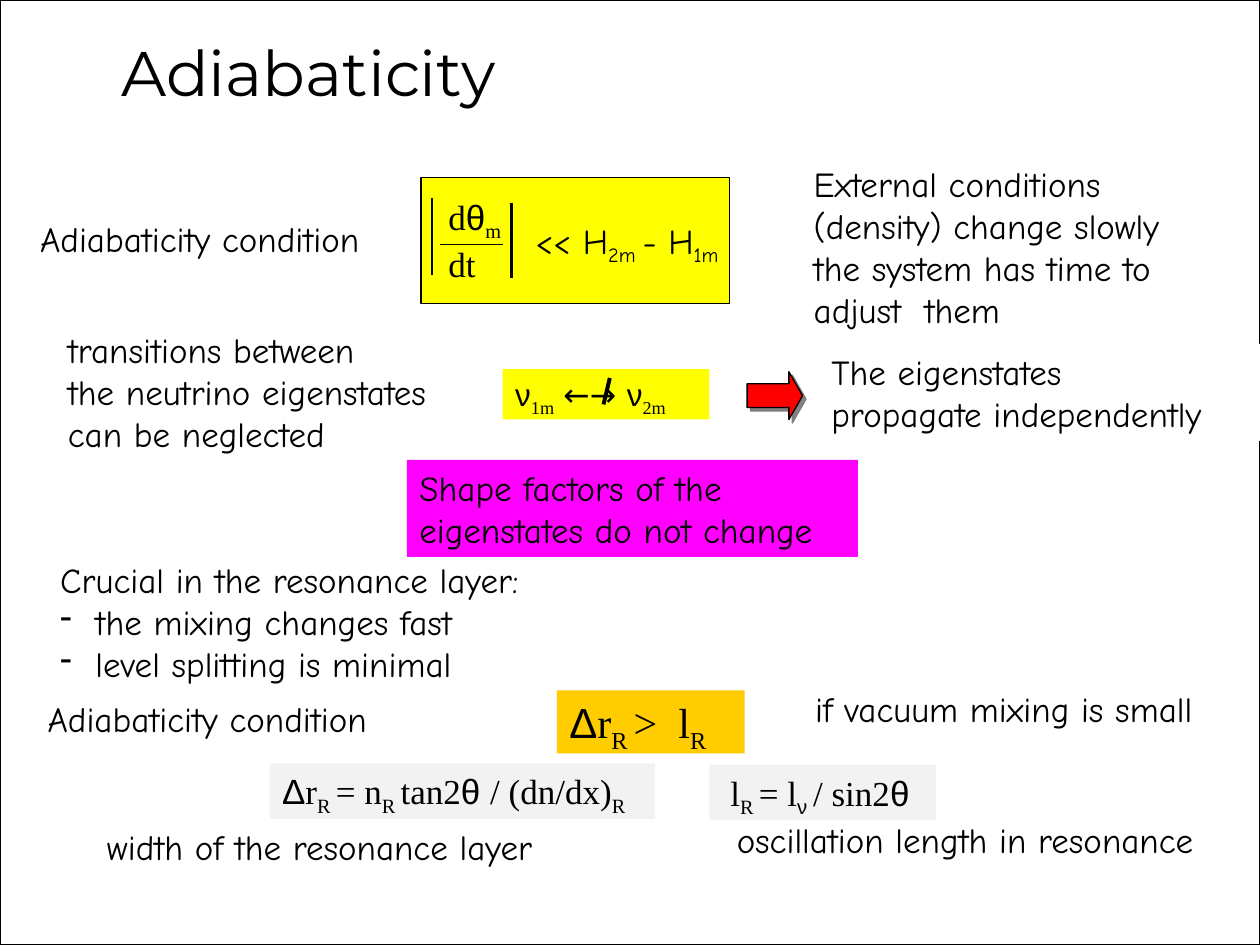
from dataclasses import dataclass
from typing import NamedTuple

from lxml.etree import SubElement
from pptx import Presentation
from pptx.dml.color import RGBColor
from pptx.enum.shapes import MSO_CONNECTOR as Conn, MSO_SHAPE as Shape
from pptx.enum.text import MSO_AUTO_SIZE as Fit, PP_ALIGN as Align
from pptx.oxml.ns import qn
from pptx.util import Inches, Pt


@dataclass(frozen=True)
class Theme:
    ink: str = "000000"
    paper: str = "FFFFFF"
    yellow: str = "FFFF00"
    orange: str = "FFCC00"
    grey: str = "F2F2F2"
    magenta: str = "FF00FF"
    red: str = "FF0000"
    shadow: str = "808080"
    hand: str = "Comic Neue"
    serif: str = "Times New Roman"
    symbol: str = "Arial"
    heading: str = "Montserrat"
    title: int = 36
    large: int = 24
    body: int = 20
    small: int = 18


T = Theme()


class Run(NamedTuple):
    text: str
    font: str = T.hand
    sub: bool = False


def serif(text: str) -> Run:
    return Run(text, T.serif)


def sub(text: str, font: str = T.serif) -> Run:
    return Run(text, font, True)


def symbol(text: str) -> Run:
    return Run(text, T.symbol)


@dataclass(frozen=True)
class Label:
    """A text box; each line is a plain string or a list of runs."""
    at: tuple[float, float, float, float]
    lines: list
    size: int = T.body
    fill: str | None = None
    wrap: bool = False
    align: Align = Align.LEFT
    fit: Fit = Fit.SHAPE_TO_FIT_TEXT
    dashed_from: int | None = None


class Rule(NamedTuple):
    start: tuple[float, float]
    end: tuple[float, float]
    width: float


def rgb(value: str) -> RGBColor:
    return RGBColor.from_string(value)


def add_dash(p) -> None:
    pPr = p._p.get_or_add_pPr()
    pPr.set("marL", str(Inches(0.28)))
    pPr.set("indent", str(-Inches(0.28)))
    SubElement(pPr, qn("a:buChar")).set("char", "-")


def add_label(s, label: Label) -> None:
    sp = s.shapes.add_textbox(*map(Inches, label.at))
    if label.fill:
        sp.fill.solid()
        sp.fill.fore_color.rgb = rgb(label.fill)
    tf = sp.text_frame
    for name, value in {"word_wrap": label.wrap, "auto_size": label.fit}.items():
        setattr(tf, name, value)
    for i, line in enumerate(label.lines):
        p = tf.add_paragraph() if i else tf.paragraphs[0]
        p.alignment = label.align
        if label.dashed_from is not None and i >= label.dashed_from:
            add_dash(p)
        for run in [Run(line)] if isinstance(line, str) else line:
            r = p.add_run()
            r.text = run.text
            for name, value in {"name": run.font, "size": Pt(label.size)}.items():
                setattr(r.font, name, value)
            r.font.color.rgb = rgb(T.ink)
            if run.sub:
                r._r.get_or_add_rPr().set("baseline", "-25000")


def add_block(s, kind: Shape, at: tuple[float, ...], fill: str):
    sp = s.shapes.add_shape(kind, *map(Inches, at))
    sp.shadow.inherit = False
    sp.fill.solid()
    sp.fill.fore_color.rgb = rgb(fill)
    sp.line.color.rgb = rgb(T.ink)
    sp.line.width = Pt(0.75)
    return sp


def add_rule(s, rule: Rule) -> None:
    c = s.shapes.add_connector(Conn.STRAIGHT, *map(Inches, rule.start + rule.end))
    c.line.color.rgb = rgb(T.ink)
    c.line.width = Pt(rule.width)
    SubElement(c._element.spPr, qn("a:effectLst"))


def add_arrow(s) -> None:
    sp = add_block(s, Shape.RIGHT_ARROW, (5.93, 2.95, 0.44, 0.38), T.red)
    sp.adjustments[0], sp.adjustments[1] = 0.5, 0.285
    effects = sp._element.spPr.find(qn("a:effectLst"))
    shadow = SubElement(effects, qn("a:outerShdw"), blurRad="0",
                        dist=str(Pt(2.8)), dir="2700000", algn="ctr", rotWithShape="0")
    SubElement(shadow, qn("a:srgbClr")).set("val", T.shadow)


RULES = [
    Rule((3.49, 1.94), (3.99, 1.94), 1),
    Rule((4.06, 1.61), (4.06, 2.21), 1.5),
    Rule((3.43, 1.57), (3.43, 2.18), 1.5),
]
NOT_STROKE = Rule((4.79, 3.21), (4.84, 3.0), 2.25)

LABELS = [
    Label((3.46, 1.5, 0.63, 0.77),
          [[serif("d"), symbol("θ"), sub("m")], [serif("dt")]]),
    Label((0.22, 1.68, 3.09, 0.44), ["Adiabaticity condition"]),
    Label((4.15, 1.69, 1.79, 0.44),
          [[Run("<< H"), sub("2m ", T.hand), Run("- H"), sub("1m", T.hand)]]),
    Label((0.38, 4.38, 4.24, 1.11),
          ["Crucial in the resonance layer:", "the mixing changes fast",
           "level splitting is minimal"], dashed_from=1),
    Label((4.42, 5.48, 1.49, 0.5),
          [[symbol("Δ"), serif("r"), sub("R "), serif(">  l"), sub("R")]],
          size=T.large, fill=T.orange),
    Label((5.63, 6.07, 1.8, 0.44),
          [[serif(" l"), sub("R "), serif("= l"), sub("ν ", T.symbol),
            serif("/ sin2"), symbol("θ")]], fill=T.grey),
    Label((2.14, 6.06, 3.06, 0.44),
          [[symbol("Δ"), serif("r"), sub("R "), serif("= n"), sub("R "),
            serif("tan2"), symbol("θ "), serif("/ (dn/dx)"), sub("R")]], fill=T.grey),
    Label((6.36, 1.24, 3.29, 1.45),
          ["External conditions", "(density) change slowly",
           "the system has time to", "adjust  them"]),
    Label((0.44, 2.56, 3.51, 1.11),
          ["transitions between", "the neutrino eigenstates", "can be neglected"]),
    Label((3.99, 2.93, 1.64, 0.4),
          [[symbol("ν"), sub("1m  "), Run("←→ "), symbol("ν"), sub("2m")]],
          size=T.small, fill=T.yellow),
    Label((6.5, 2.73, 3.5, 0.77), ["The eigenstates", "propagate independently"],
          fill=T.paper, wrap=True),
    Label((6.37, 5.41, 3.42, 0.44), ["if vacuum mixing is small"], wrap=True),
    Label((0.42, 0.22, 4.06, 1.03), [[Run("Adiabaticity", T.heading)]],
          size=T.title, align=Align.CENTER, fit=Fit.NONE),
    Label((5.75, 6.45, 4.25, 0.44), ["oscillation length in resonance"], wrap=True),
    Label((0.75, 6.5, 4.45, 0.44), ["width of the resonance layer"], wrap=True),
    Label((3.23, 3.65, 3.58, 0.77), ["Shape factors of the eigenstates do not change"],
          fill=T.magenta, wrap=True),
    Label((0.28, 5.49, 3.4, 0.44), ["Adiabaticity condition"], wrap=True),
]


def main() -> None:
    prs = Presentation()
    prs.slide_width, prs.slide_height = Inches(10), Inches(7.5)
    s = prs.slides.add_slide(prs.slide_layouts[6])
    add_block(s, Shape.RECTANGLE, (0, 0, 10, 7.5), T.paper)
    add_block(s, Shape.RECTANGLE, (3.34, 1.41, 2.45, 1), T.yellow)
    for rule in RULES:
        add_rule(s, rule)
    for label in LABELS:
        add_label(s, label)
    add_rule(s, NOT_STROKE)
    add_arrow(s)
    prs.save("out.pptx")


if __name__ == "__main__":
    main()
